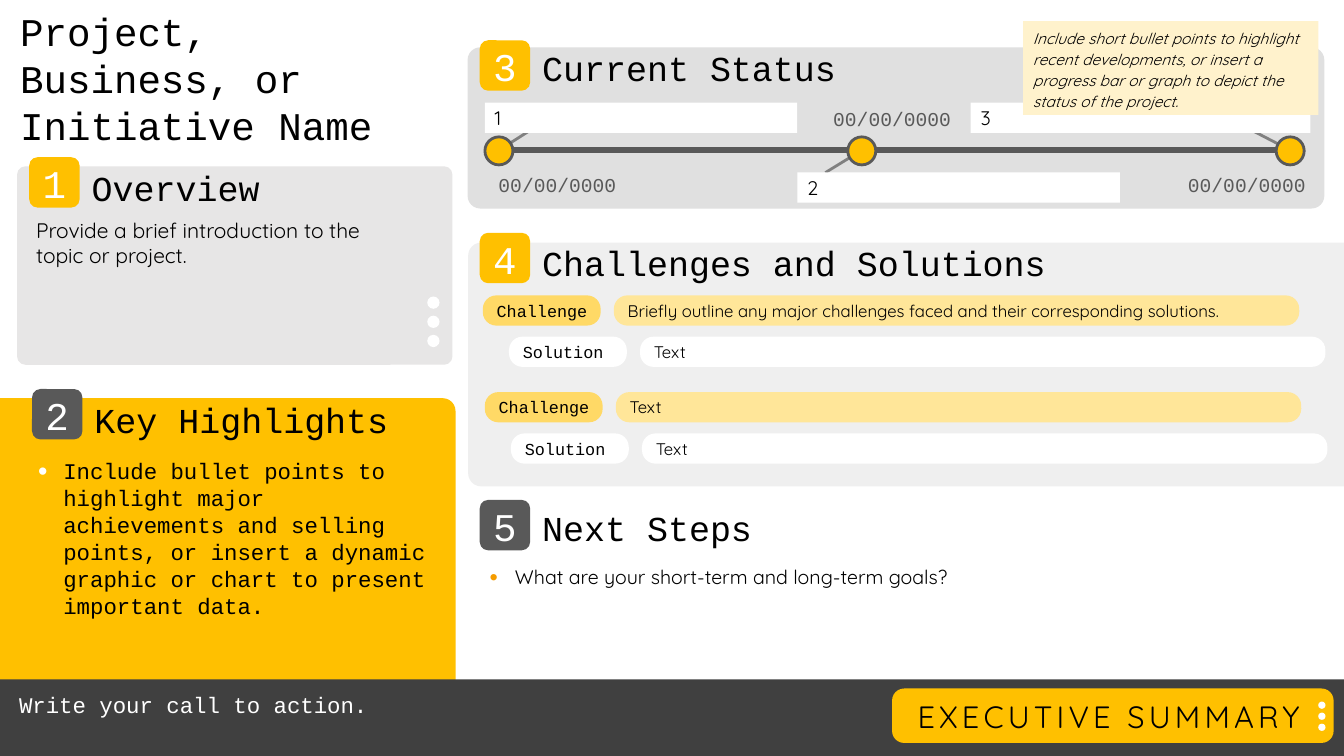
from dataclasses import dataclass

from lxml.etree import SubElement
from pptx import Presentation
from pptx.dml.color import RGBColor
from pptx.enum.shapes import MSO_CONNECTOR as Link, MSO_SHAPE as Kind
from pptx.enum.text import MSO_ANCHOR as Anchor, PP_ALIGN as Align
from pptx.oxml.ns import qn
from pptx.util import Pt


@dataclass(frozen=True)
class Theme:
    mono: str = "Courier New"
    sans: str = "Quicksand"
    black: str = "000000"
    white: str = "FFFFFF"
    amber: str = "FFC000"
    tag: str = "FFD966"
    pale: str = "FFE699"
    note: str = "FFF2CC"
    bullet: str = "F59C00"
    status: str = "E0E0E0"
    overview: str = "E7E6E6"
    challenges: str = "EFEFEF"
    leader: str = "808080"
    slate: str = "595959"
    footer: str = "404040"
    title_size: float = 28
    banner_size: float = 22
    heading_size: float = 25
    lead_size: float = 16
    intro_size: float = 15
    body_size: float = 14
    pill_size: float = 12
    note_size: float = 11


THEME = Theme()
PADDED = (7.2, 3.6, 7.2, 3.6)
FLUSH = (0, 0, 0, 0)
SIDES = (7.2, 0, 7.2, 0)
PILL_INSETS = (7.2, 0, 0, 0)


def put_shape(page, kind, box, fill, outline=None, round_by=None):
    shape = page.shapes.add_shape(kind, *map(Pt, box))
    shape.shadow.inherit = False
    shape.fill.solid()
    shape.fill.fore_color.rgb = RGBColor.from_string(fill)
    if outline:
        shape.line.color.rgb = RGBColor.from_string(outline)
        shape.line.width = Pt(2)
    else:
        shape.line.fill.background()
    if round_by is not None:
        shape.adjustments[0] = round_by
    return shape


def write(shape, text, size, font=THEME.mono, color=THEME.black, insets=PADDED,
          anchor=Anchor.TOP, align=Align.LEFT, italic=False, tracking=None,
          spacing=None, bullet=None):
    frame = shape.text_frame
    margins = ("margin_left", "margin_top", "margin_right", "margin_bottom")
    frame_format = dict(zip(margins, map(Pt, insets)), word_wrap=True, vertical_anchor=anchor)
    para = frame.paragraphs[0]
    span = para.add_run()
    span.text = text
    if bullet:
        add_bullet(para, bullet)
    para_format = {"alignment": align, "line_spacing": spacing,
                   "space_after": Pt(6) if bullet else None}
    font_format = {"name": font, "size": Pt(size), "italic": italic}
    for target, values in ((frame, frame_format), (para, para_format), (span.font, font_format)):
        for name, value in values.items():
            setattr(target, name, value)
    span.font.color.rgb = RGBColor.from_string(color)
    if tracking:
        span.font._element.set("spc", str(tracking * 100))


def add_bullet(para, color):
    props = para._p.get_or_add_pPr()
    props.set("marL", str(Pt(18)))
    props.set("indent", str(-Pt(18)))
    SubElement(SubElement(props, qn("a:buClr")), qn("a:srgbClr")).set("val", color)
    SubElement(props, qn("a:buSzPct")).set("val", "120000")
    SubElement(props, qn("a:buFont")).set("typeface", "Arial")
    SubElement(props, qn("a:buChar")).set("char", "•")


def put_text(page, box, text, size, **options):
    write(page.shapes.add_textbox(*map(Pt, box)), text, size, **options)


def put_line(page, start, end, color, width):
    line = page.shapes.add_connector(Link.STRAIGHT, *map(Pt, (*start, *end)))
    line.line.color.rgb = RGBColor.from_string(color)
    line.line.width = Pt(width)
    SubElement(line._element.spPr, qn("a:effectLst"))


def put_dots(page, left, top, size, pitch):
    for index in range(3):
        put_shape(page, Kind.OVAL, (left, top + index * pitch, size, size), THEME.white)


def put_heading(page, left, top, number, title, fill=THEME.amber, drop=6.5):
    put_text(page, (left + 44.6, top + drop, 412, 26), title, THEME.heading_size,
             insets=FLUSH, anchor=Anchor.MIDDLE)
    put_shape(page, Kind.ROUNDED_RECTANGLE, (left, top, 36, 36), fill)
    put_text(page, (left, top + 7, 36, 23), number, THEME.title_size, color=THEME.white,
             insets=FLUSH, anchor=Anchor.MIDDLE, align=Align.CENTER, tracking=-3)


def draw_overview(page, box):
    left, top, width, height = box
    put_shape(page, Kind.ROUNDED_RECTANGLE, box, THEME.overview, round_by=0.042)
    put_heading(page, left + 8.7, top - 6.5, "1", "Overview", drop=8.6)
    put_text(page, (left + 6.5, top + 33.1, 280, 44),
             "Provide a brief introduction to the topic or project.",
             THEME.intro_size, font=THEME.sans)
    put_dots(page, left + width - 18, top + 93, 8.8, 13.7)


def draw_highlights(page, box):
    left, top, width, height = box
    put_shape(page, Kind.ROUND_1_RECTANGLE, box, THEME.amber, round_by=0.036)
    put_heading(page, left + 22.9, top - 6.5, "2", "Key Highlights", THEME.slate, 8.6)
    put_text(page, (left + 20.2, top + 38.9, 296, 124),
             "Include bullet points to highlight major achievements and selling points, "
             "or insert a dynamic graphic or chart to present important data.",
             THEME.lead_size, bullet=THEME.white)


def draw_status(page, box):
    left, top, width, height = box
    axis = top + 73.5
    above, below = top + 39.6, top + 89.3
    put_shape(page, Kind.ROUNDED_RECTANGLE, box, THEME.status, round_by=0.079)
    put_heading(page, left + 8.7, top - 5, "3", "Current Status")
    milestones = [
        ("1", 22.4, (22, -14), (12.3, above, 223.2), (8.7, top + 86.4)),
        ("2", 281.6, (-26, 16), (235.5, below, 230.4), (247.8, top + 38.9)),
        ("3", 587.6, (-27, -14), (359.4, above, 242.6), (501.2, top + 86.4)),
    ]
    for _, center, reach, _, _ in milestones:
        start = (left + center, axis)
        put_line(page, start, (start[0] + reach[0], axis + reach[1]), THEME.leader, 2)
    put_line(page, (left + 21.7, axis), (left + 595, axis), THEME.slate, 4)
    for label, center, _, (label_x, label_y, label_w), (date_x, date_y) in milestones:
        put_shape(page, Kind.OVAL, (left + center - 10, axis + 0.5 - 10, 20, 20),
                  THEME.amber, outline=THEME.slate)
        put_text(page, (left + date_x, date_y, 111, 24.5), "00/00/0000", THEME.body_size,
                 color=THEME.slate, align=Align.CENTER)
        bar = put_shape(page, Kind.RECTANGLE, (left + label_x, label_y, label_w, 21.6), THEME.white)
        write(bar, label, THEME.body_size, font=THEME.sans, insets=SIDES, anchor=Anchor.MIDDLE)
    note = put_shape(page, Kind.RECTANGLE, (left + 396.8, top - 18.7, 211, 67), THEME.note)
    write(note, "Include short bullet points to highlight recent developments, or insert a "
          "progress bar or graph to depict the status of the project.",
          THEME.note_size, font=THEME.sans, italic=True, spacing=1.15)


def draw_pills(page, left, top, name, text, name_fill, text_fill):
    pills = ((0, 84.2, name, THEME.mono, name_fill), (93.6, 489.6, text, THEME.sans, text_fill))
    for shift, width, words, font, fill in pills:
        pill = put_shape(page, Kind.ROUNDED_RECTANGLE, (left + shift, top, width, 21.6),
                         fill, round_by=0.448)
        write(pill, words, THEME.pill_size, font=font, insets=PILL_INSETS, anchor=Anchor.MIDDLE)


def draw_challenges(page, box):
    left, top, width, height = box
    upright = (left + (width - height) / 2, top + (height - width) / 2, height, width)
    panel = put_shape(page, Kind.ROUND_2_SAME_RECTANGLE, upright, THEME.challenges, round_by=0.054)
    panel.rotation = 270
    put_heading(page, left + 8.3, top - 6.9, "4", "Challenges and Solutions", drop=7.9)
    prompt = "Briefly outline any major challenges faced and their corresponding solutions."
    for index, challenge in enumerate((prompt, "Text")):
        x, y = left + 10.5 + 1.4 * index, top + 37.8 + 69.1 * index
        draw_pills(page, x, y, "Challenge", challenge, THEME.tag, THEME.pale)
        draw_pills(page, x + 18.7, y + 29.5, "Solution", "Text", THEME.white, THEME.white)


def draw_next_steps(page, box):
    left, top, width, height = box
    put_heading(page, left, top, "5", "Next Steps", THEME.slate)
    put_text(page, (left, top + 43.2, width, 24.5),
             "What are your short-term and long-term goals?",
             THEME.body_size, font=THEME.sans, bullet=THEME.bullet)


def draw_footer(page, box):
    left, top, width, height = box
    put_shape(page, Kind.RECTANGLE, box, THEME.footer)
    put_text(page, (left + 6.5, top + 5, 602, 26.6), "Write your call to action.",
             THEME.lead_size, color=THEME.white)
    banner = left + width - 322.8
    put_shape(page, Kind.ROUNDED_RECTANGLE, (banner, top + 6.5, 315.4, 38.9),
              THEME.amber, round_by=0.221)
    put_text(page, (banner, top + 9.4, 309.6, 33.8), "EXECUTIVE SUMMARY", THEME.banner_size,
             font=THEME.sans, align=Align.CENTER, tracking=3)
    put_dots(page, banner + 304.4, top + 15.8, 5.2, 7.9)


def main():
    deck = Presentation()
    deck.slide_width, deck.slide_height = Pt(960), Pt(540)
    page = deck.slides.add_slide(deck.slide_layouts[6])
    put_text(page, (14.4, 5, 291, 90.7), "Project, Business, or Initiative Name",
             THEME.title_size, insets=FLUSH)
    draw_challenges(page, (334.4, 173.2, 625.7, 174.2))
    draw_status(page, (334, 33.8, 612, 115.2))
    draw_highlights(page, (0, 284.4, 325.4, 255.6))
    draw_overview(page, (12.2, 118.8, 311, 141.8))
    draw_next_steps(page, (342.7, 357.1, 608.4, 68))
    draw_footer(page, (0, 485.3, 960, 54.7))
    deck.save("out.pptx")


if __name__ == "__main__":
    main()
